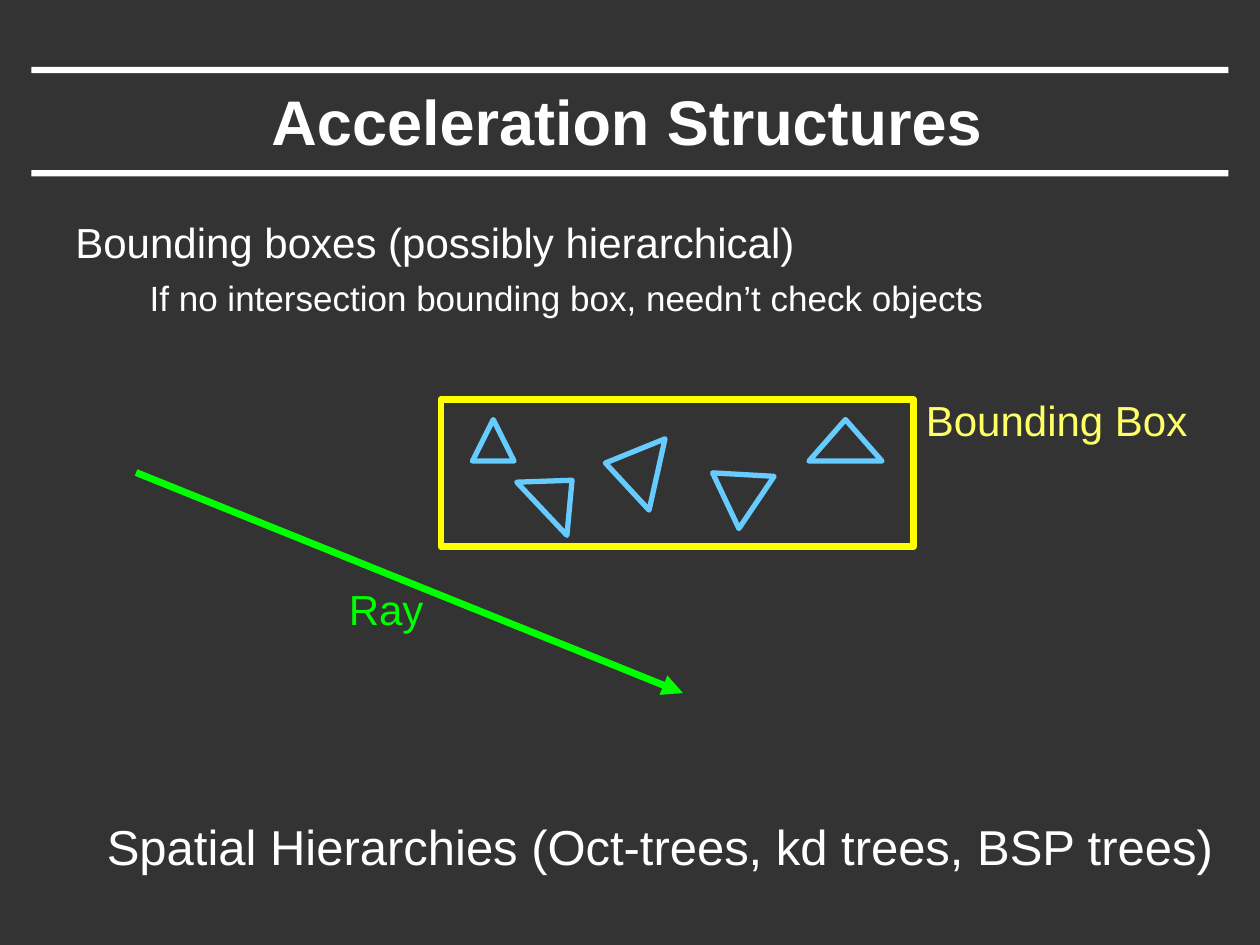
from dataclasses import dataclass

import pptx
import pptx.dml.color
import pptx.enum.shapes
import pptx.enum.text
import pptx.oxml
import pptx.oxml.ns
import pptx.util
from pptx.util import Inches

SHAPES = pptx.enum.shapes.MSO_SHAPE


@dataclass(frozen=True)
class Theme:
    font: str = "Arial"
    background: str = "333333"
    text: str = "FFFFFF"
    box: str = "FFFF00"
    box_label: str = "FFFF66"
    triangle: str = "66CCFF"
    ray: str = "00FF00"
    title_size: int = 36
    closing_size: int = 28
    point_size: int = 24
    detail_size: int = 20
    heavy_line: int = 4
    light_line: int = 3


@dataclass(frozen=True)
class Box:
    left: float
    top: float
    width: float
    height: float

    def lengths(self) -> tuple:
        return tuple(Inches(v) for v in (self.left, self.top, self.width, self.height))


@dataclass(frozen=True)
class Triangle:
    box: Box
    rotation: float = 0


@dataclass(frozen=True)
class Label:
    text: str
    box: Box
    size: int
    color: str
    wrap: bool = False


@dataclass(frozen=True)
class Point:
    text: str
    size: int
    level: int
    margin: float
    indent: float
    space_before: float


THEME = Theme()
RULES = [Box(0.25, top, 9.5, 0.05) for top in (0.53, 1.35)]
POINTS = [
    Point("Bounding boxes (possibly hierarchical)", THEME.point_size, 0, 0.38, -0.38, 3),
    Point("If no intersection bounding box, needn’t check objects",
          THEME.detail_size, 1, 0.81, -0.22, 5.5),
]
TRIANGLES = [
    Triangle(Box(3.75, 3.33, 0.33, 0.33)),
    Triangle(Box(4.13, 3.76, 0.58, 0.33), 46.7),
    Triangle(Box(4.72, 3.51, 0.58, 0.42), 282.6),
    Triangle(Box(5.58, 3.66, 0.5, 0.42), 304),
    Triangle(Box(6.42, 3.33, 0.58, 0.33)),
]
LABELS = [
    Label("Bounding Box", Box(7.25, 3.08, 2.3, 0.5), THEME.point_size, THEME.box_label),
    Label("Ray", Box(2.67, 4.58, 0.8, 0.5), THEME.point_size, THEME.ray),
    Label("Spatial Hierarchies (Oct-trees, kd trees, BSP trees)",
          Box(0.75, 6.43, 9.11, 0.57), THEME.closing_size, THEME.text, True),
]


def rgb(color: str) -> pptx.dml.color.RGBColor:
    return pptx.dml.color.RGBColor.from_string(color)


def add_run(paragraph, text: str, size: int, color: str, bold: bool = False) -> None:
    run = paragraph.add_run()
    run.text = text
    run.font.name = THEME.font
    run.font.size = pptx.util.Pt(size)
    run.font.bold = bold
    run.font.color.rgb = rgb(color)


def add_rule(slide, box: Box) -> None:
    rule = slide.shapes.add_shape(SHAPES.RECTANGLE, *box.lengths())
    rule.shadow.inherit = False
    rule.fill.solid()
    rule.fill.fore_color.rgb = rgb(THEME.text)
    rule.line.fill.background()


def add_outline(shapes, preset, box: Box, color: str, weight: int, rotation: float = 0) -> None:
    outline = shapes.add_shape(preset, *box.lengths())
    outline.shadow.inherit = False
    outline.fill.background()
    outline.line.color.rgb = rgb(color)
    outline.line.width = pptx.util.Pt(weight)
    outline.rotation = rotation


def add_title(slide, text: str, box: Box) -> None:
    title = slide.shapes.title
    title.left, title.top, title.width, title.height = box.lengths()
    title.text_frame.vertical_anchor = pptx.enum.text.MSO_ANCHOR.MIDDLE
    paragraph = title.text_frame.paragraphs[0]
    paragraph.alignment = pptx.enum.text.PP_ALIGN.CENTER
    add_run(paragraph, text, THEME.title_size, THEME.text, True)


def add_points(slide, points: list[Point], box: Box) -> None:
    frame = slide.shapes.add_textbox(*box.lengths()).text_frame
    frame.word_wrap = True
    for index, point in enumerate(points):
        paragraph = frame.add_paragraph() if index else frame.paragraphs[0]
        paragraph.level = point.level
        paragraph.space_before = pptx.util.Pt(point.space_before)
        properties = paragraph._p.get_or_add_pPr()
        properties.set("marL", str(Inches(point.margin)))
        properties.set("indent", str(Inches(point.indent)))
        add_run(paragraph, point.text, point.size, THEME.text)


def add_label(slide, label: Label) -> None:
    frame = slide.shapes.add_textbox(*label.box.lengths()).text_frame
    frame.word_wrap = label.wrap
    frame.auto_size = pptx.enum.text.MSO_AUTO_SIZE.SHAPE_TO_FIT_TEXT
    add_run(frame.paragraphs[0], label.text, label.size, label.color)


def add_ray(slide, start: tuple[float, float], end: tuple[float, float]) -> None:
    ray = slide.shapes.add_connector(
        pptx.enum.shapes.MSO_CONNECTOR.STRAIGHT, *(Inches(v) for v in start + end))
    ray.line.color.rgb = rgb(THEME.ray)
    ray.line.width = pptx.util.Pt(THEME.heavy_line)
    arrowhead = pptx.oxml.parse_xml(
        f'<a:tailEnd {pptx.oxml.ns.nsdecls("a")} type="triangle"/>')
    ray.line._get_or_add_ln().append(arrowhead)
    ray._element.spPr.append(
        pptx.oxml.parse_xml(f'<a:effectLst {pptx.oxml.ns.nsdecls("a")}/>'))


def main() -> None:
    presentation = pptx.Presentation()
    presentation.slide_width = Inches(10)
    presentation.slide_height = Inches(7.5)
    slide = presentation.slides.add_slide(presentation.slide_layouts.get_by_name("Title Only"))
    slide.background.fill.solid()
    slide.background.fill.fore_color.rgb = rgb(THEME.background)

    for rule in RULES:
        add_rule(slide, rule)
    add_title(slide, "Acceleration Structures", Box(0.74, 0.58, 8.47, 0.75))
    add_points(slide, POINTS, Box(0.5, 1.67, 9, 5.5))
    add_outline(slide.shapes, SHAPES.RECTANGLE, Box(3.5, 3.17, 3.75, 1.17),
                THEME.box, THEME.heavy_line)
    scene = slide.shapes.add_group_shape()
    for triangle in TRIANGLES:
        add_outline(scene.shapes, SHAPES.ISOSCELES_TRIANGLE, triangle.box,
                    THEME.triangle, THEME.light_line, triangle.rotation)
    add_ray(slide, (1.08, 3.75), (5.42, 5.5))
    for label in LABELS:
        add_label(slide, label)
    presentation.save("out.pptx")


if __name__ == "__main__":
    main()
